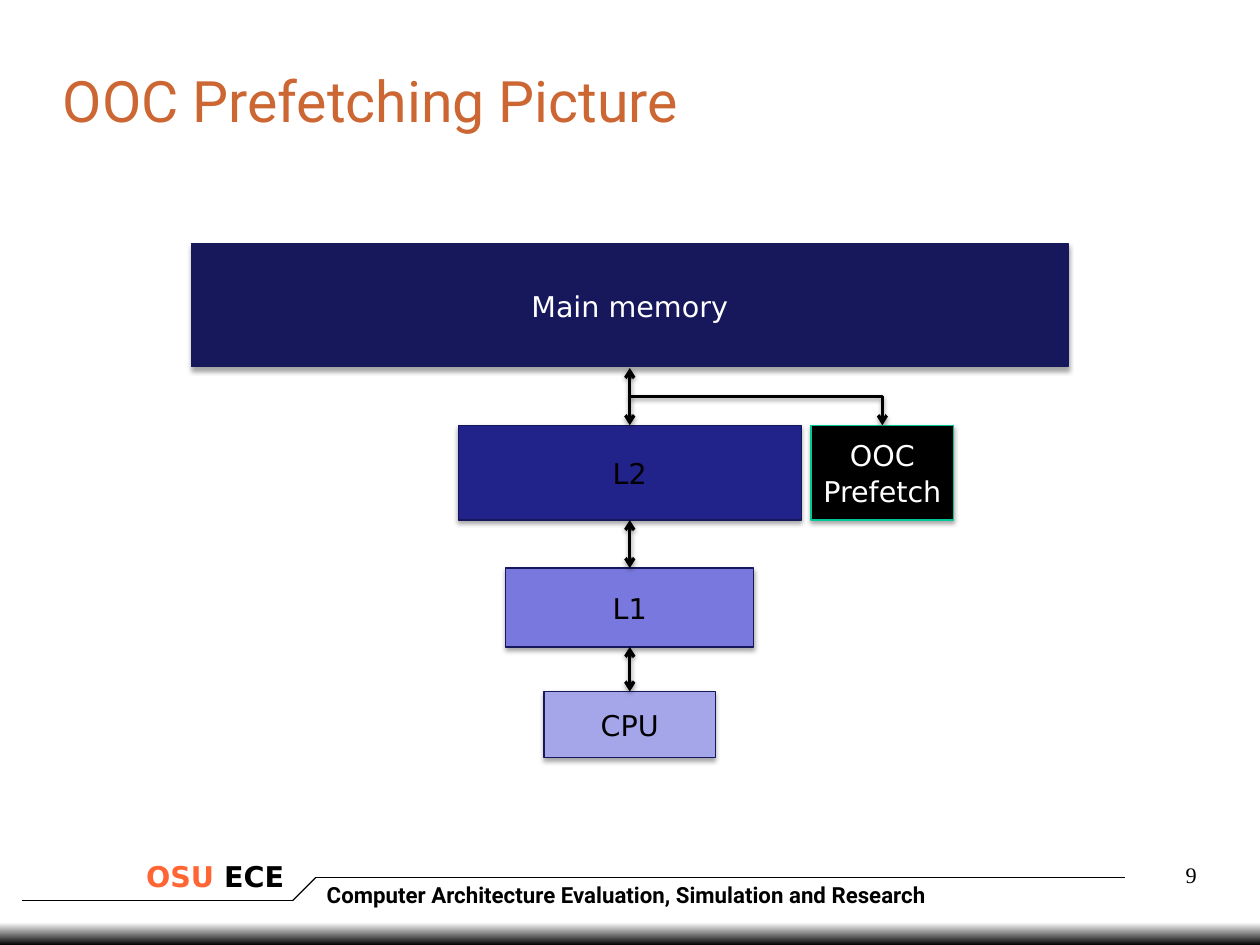
from lxml import etree
from pptx import Presentation
from pptx.dml.color import RGBColor
from pptx.enum.shapes import MSO_CONNECTOR, MSO_SHAPE
from pptx.enum.text import MSO_ANCHOR, PP_ALIGN
from pptx.oxml.ns import qn
from pptx.util import Inches, Pt

LEFT, CENTER, RIGHT = PP_ALIGN.LEFT, PP_ALIGN.CENTER, PP_ALIGN.RIGHT
TOP, MIDDLE = MSO_ANCHOR.TOP, MSO_ANCHOR.MIDDLE
STRAIGHT, ELBOW = MSO_CONNECTOR.STRAIGHT, MSO_CONNECTOR.ELBOW
RECTANGLE = MSO_SHAPE.RECTANGLE
CM_PER_INCH = 2.54

COLORS = {
    "white": "FFFFFF",
    "black": "000000",
    "title": "CC6633",
    "orange": "FF6633",
    "navy": "17175C",
    "blue": "22228B",
    "violet": "7878DE",
    "lavender": "A5A5E9",
    "green": "00C896",
}
RGB = {name: RGBColor.from_string(value) for name, value in COLORS.items()}


def write(shape, *runs, font="DejaVu Sans", size=18, bold=False, align=LEFT,
          anchor=TOP, spacing=1.04, insets=(0.1, 0.05), wrap=True):
    frame = shape.text_frame
    frame.word_wrap = wrap
    frame.vertical_anchor = anchor
    frame.margin_left = frame.margin_right = Inches(insets[0])
    frame.margin_top = frame.margin_bottom = Inches(insets[1])
    paragraph = frame.paragraphs[0]
    paragraph.alignment = align
    paragraph.line_spacing = spacing
    for text, color in runs:
        run = paragraph.add_run()
        run.text = text
        run.font.name = font
        run.font.size = Pt(size)
        run.font.bold = bold
        run.font.color.rgb = RGB[color]


def set_shadow(shape, opacity=0, distance=0):
    effects = etree.SubElement(shape._element.spPr, qn("a:effectLst"))
    if opacity:
        shadow = etree.SubElement(
            effects, qn("a:outerShdw"), blurRad=str(Pt(3.1)),
            dist=str(Pt(distance)), dir="5400000", rotWithShape="0")
        color = etree.SubElement(shadow, qn("a:srgbClr"), val=COLORS["black"])
        etree.SubElement(color, qn("a:alpha"), val=str(opacity * 1000))


presentation = Presentation()
presentation.slide_width = Inches(28 / CM_PER_INCH)
presentation.slide_height = Inches(21 / CM_PER_INCH)
slide = presentation.slides.add_slide(presentation.slide_layouts[5])
shapes = slide.shapes

title = shapes.title
title.left, title.top = Inches(0.55), Inches(0.33)
title.width, title.height = Inches(9.92), Inches(1.14)
write(title, ("OOC Prefetching Picture", "title"), font="Roboto", size=36,
      anchor=MIDDLE, spacing=0.97, insets=(0, 0))

footer_band = shapes.add_shape(
    RECTANGLE, 0, Inches(8.07), presentation.slide_width, Inches(0.2))
footer_band.fill.gradient()
footer_band.fill.gradient_angle = 270
for stop, color in zip(footer_band.fill.gradient_stops, ("white", "black")):
    stop.color.rgb = RGB[color]
footer_band.line.fill.background()
set_shadow(footer_band)

footer_points = [(0.19, 7.88), (2.56, 7.88), (2.76, 7.68), (9.84, 7.68)]
for start, end in zip(footer_points, footer_points[1:]):
    footer_line = shapes.add_connector(
        STRAIGHT, *(Inches(value) for value in start + end))
    footer_line.line.color.rgb = RGB["black"]
    footer_line.line.width = Pt(0.75)
    set_shadow(footer_line)

footer = shapes.add_textbox(Inches(2.76), Inches(7.67), Inches(6.82), Inches(0.33))
write(footer, ("Computer Architecture Evaluation, Simulation and Research", "black"),
      font="Roboto", size=14, bold=True, spacing=0.98, wrap=False)
department = shapes.add_textbox(Inches(1.18), Inches(7.48), Inches(1.57), Inches(0.39))
write(department, ("OSU", "orange"), (" ECE", "black"), bold=True, spacing=0.98)
page_number = shapes.add_textbox(Inches(7.9), Inches(7.53), Inches(2.57), Inches(0.57))
write(page_number, ("9", "black"), font="Times New Roman", size=14,
      align=RIGHT, spacing=1.02, insets=(0, 0))

AXIS = 5.51
PREFETCH_AXIS = 7.72
blocks = [
    ("CPU", AXIS, 6.05, 1.5, 0.58, "lavender", "navy", "black"),
    ("L1", AXIS, 4.97, 2.17, 0.69, "violet", "navy", "black"),
    ("L2", AXIS, 3.72, 3, 0.83, "blue", "navy", "black"),
    ("Main memory", AXIS, 2.13, 7.67, 1.08, "navy", "navy", "white"),
    ("OOC Prefetch", PREFETCH_AXIS, 3.72, 1.25, 0.83, "black", "green", "white"),
]
for text, center, top, width, height, fill, outline, text_color in blocks:
    block = shapes.add_shape(RECTANGLE, Inches(center - width / 2), Inches(top),
                             Inches(width), Inches(height))
    block.fill.solid()
    block.fill.fore_color.rgb = RGB[fill]
    block.line.color.rgb = RGB[outline]
    block.line.width = Pt(0.75)
    set_shadow(block, 35, 1.8)
    write(block, (text, text_color), align=CENTER, anchor=MIDDLE)

arrows = [
    (STRAIGHT, AXIS, 6.05, AXIS, 5.66),
    (STRAIGHT, AXIS, 4.97, AXIS, 4.55),
    (STRAIGHT, AXIS, 3.72, AXIS, 3.22),
    (ELBOW, AXIS, 3.47, PREFETCH_AXIS, 3.72),
]
for kind, *ends in arrows:
    arrow = shapes.add_connector(kind, *(Inches(value) for value in ends))
    arrow.line.color.rgb = RGB["black"]
    arrow.line.width = Pt(2)
    properties = arrow._element.spPr
    outline = properties.find(qn("a:ln"))
    if kind == ELBOW:
        properties.find(qn("a:prstGeom")).set("prst", "bentConnector2")
    else:
        etree.SubElement(outline, qn("a:headEnd"), type="arrow")
    etree.SubElement(outline, qn("a:tailEnd"), type="arrow")
    set_shadow(arrow, 38, 1.6)

presentation.save("out.pptx")
